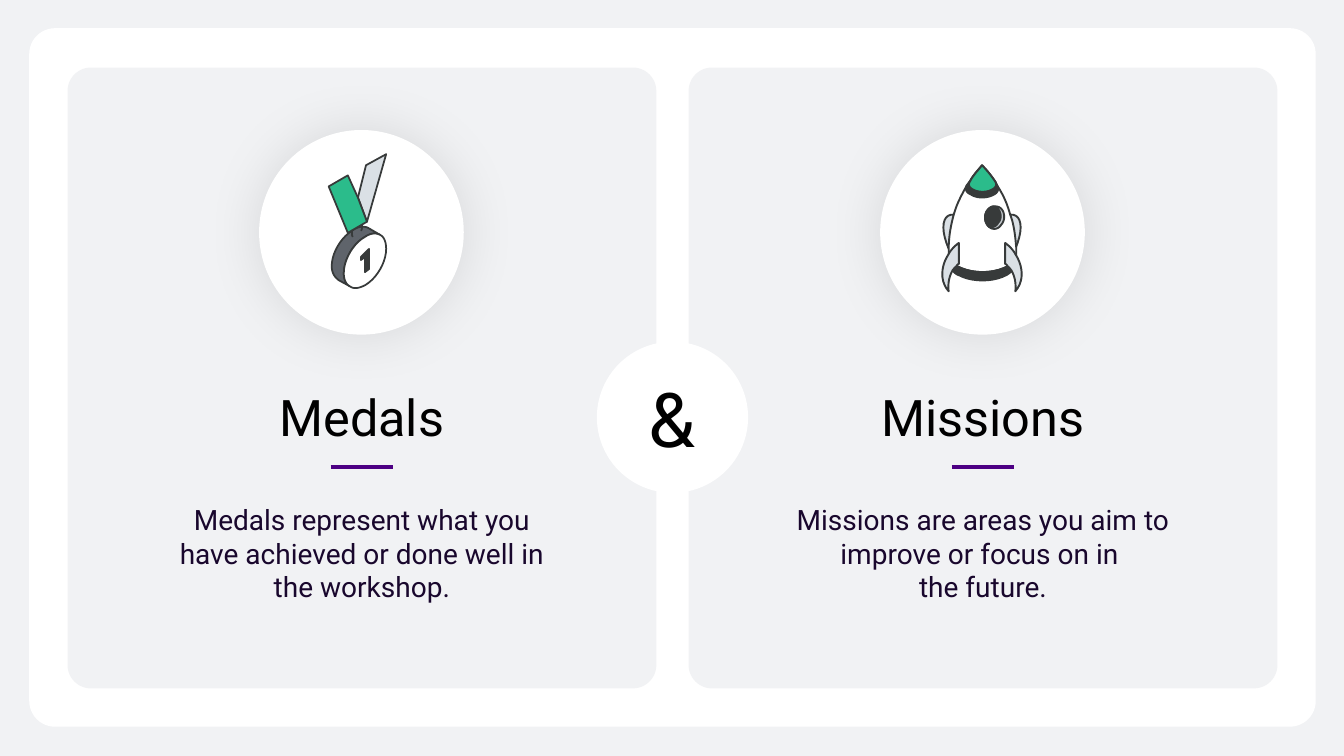
from lxml.etree import SubElement
from pptx import Presentation
from pptx.dml.color import RGBColor
from pptx.enum.shapes import MSO_CONNECTOR, MSO_SHAPE
from pptx.enum.text import MSO_ANCHOR, PP_ALIGN
from pptx.oxml.ns import qn
from pptx.util import Inches, Pt

WHITE = RGBColor(0xFF, 0xFF, 0xFF)
BLACK = RGBColor(0x00, 0x00, 0x00)
MIST = RGBColor(0xF1, 0xF2, 0xF4)
NIGHT = RGBColor(0x19, 0x07, 0x2D)
VIOLET = RGBColor(0x4D, 0x00, 0x83)
CHARCOAL = RGBColor(0x37, 0x3A, 0x3A)
SLATE = RGBColor(0x5F, 0x64, 0x6B)
SILVER = RGBColor(0xDA, 0xE0, 0xE5)
GLASS = RGBColor(0xC2, 0xC7, 0xCC)
GREEN = RGBColor(0x2B, 0xBC, 0x8B)

CARD_TOP, CARD_WIDTH, CARD_HEIGHT = 0.67, 5.84, 6.16
CARD_LEFTS = (0.67, 6.83)
ROCKET_AXIS = 9.74
CURVE_STEPS = 10


def mirror(points):
    return [tuple(round(2 * ROCKET_AXIS - value, 2) if index % 2 == 0 else value
                  for index, value in enumerate(point)) for point in points]


def flatten(points):
    corners = [points[0]]
    for point in points[1:]:
        if len(point) == 2:
            corners.append(point)
            continue
        x0, y0 = corners[-1]
        x1, y1, x2, y2, x3, y3 = point
        for step in range(1, CURVE_STEPS + 1):
            t = step / CURVE_STEPS
            a, b, c, d = (1 - t) ** 3, 3 * t * (1 - t) ** 2, 3 * t * t * (1 - t), t ** 3
            corners.append((a * x0 + b * x1 + c * x2 + d * x3,
                            a * y0 + b * y1 + c * y2 + d * y3))
    return corners


MEDAL = [
    (SILVER, [(3.83, 1.53), (3.64, 2.2), (3.55, 1.96), (3.63, 1.64)]),
    (SLATE, [(3.49, 2.29), (3.52, 2.27), (3.54, 2.26, 3.57, 2.25, 3.59, 2.25),
             (3.61, 2.25, 3.63, 2.25, 3.65, 2.26), (3.77, 2.33),
             (3.73, 2.31, 3.68, 2.31, 3.62, 2.35), (3.51, 2.41, 3.41, 2.57, 3.41, 2.71),
             (3.41, 2.77, 3.43, 2.82, 3.47, 2.84), (3.36, 2.78),
             (3.32, 2.75, 3.29, 2.71, 3.29, 2.64), (3.29, 2.51, 3.38, 2.36, 3.49, 2.29)]),
    (WHITE, [(3.77, 2.33), (3.81, 2.35, 3.83, 2.4, 3.83, 2.47),
             (3.83, 2.6, 3.74, 2.76, 3.62, 2.83), (3.56, 2.86, 3.51, 2.87, 3.47, 2.84),
             (3.43, 2.82, 3.41, 2.77, 3.41, 2.71), (3.41, 2.57, 3.51, 2.41, 3.62, 2.35),
             (3.68, 2.31, 3.73, 2.31, 3.77, 2.33)]),
    (CHARCOAL, [(3.66, 2.47), (3.66, 2.67), (3.62, 2.7), (3.62, 2.55),
                (3.58, 2.58), (3.58, 2.55)]),
    (GREEN, [(3.55, 1.96), (3.64, 2.2), (3.45, 2.31), (3.26, 1.85), (3.45, 1.74)]),
    (None, [(3.59, 2.23), (3.59, 2.25), (3.59, 2.27, 3.59, 2.28, 3.58, 2.29)]),
    (None, [(3.5, 2.35), (3.49, 2.34, 3.49, 2.33, 3.49, 2.31), (3.49, 2.28)]),
]

FIN = [(9.41, 2.89), (9.41, 2.89, 9.39, 2.78, 9.45, 2.68),
       (9.46, 2.67, 9.47, 2.65, 9.49, 2.64), (9.49, 2.63, 9.5, 2.62, 9.51, 2.62),
       (9.51, 2.41), (9.47, 2.44, 9.43, 2.48, 9.41, 2.52),
       (9.33, 2.64, 9.32, 2.79, 9.41, 2.89)]
WING = [(9.46, 2.13), (9.35, 2.12, 9.32, 2.26, 9.41, 2.47)]

ROCKET = [
    (SILVER, WING),
    (SILVER, mirror(WING)),
    (WHITE, [(9.74, 1.64), (9.79, 1.69, 9.83, 1.74, 9.87, 1.8), (9.89, 1.84),
             (9.95, 1.93, 9.99, 2.02, 10.02, 2.13), (10.06, 2.23, 10.07, 2.35, 10.08, 2.46),
             (10.08, 2.53), (10, 2.64), (9.85, 2.72, 9.64, 2.72, 9.49, 2.64),
             (9.41, 2.52), (9.41, 2.47), (9.41, 2.35, 9.43, 2.24, 9.46, 2.13),
             (9.49, 2.02, 9.54, 1.93, 9.59, 1.84), (9.62, 1.8),
             (9.65, 1.74, 9.7, 1.69, 9.74, 1.64)]),
    (CHARCOAL, [(10.04, 2.69), (10.02, 2.7, 10, 2.72, 9.98, 2.73),
                (9.85, 2.8, 9.64, 2.8, 9.51, 2.73), (9.48, 2.72, 9.46, 2.7, 9.45, 2.68),
                (9.49, 2.64), (9.64, 2.72, 9.85, 2.72, 10, 2.64)]),
    (CHARCOAL, [(9.89, 1.84), (9.91, 1.87, 9.9, 1.91, 9.86, 1.93),
                (9.79, 1.97, 9.69, 1.97, 9.63, 1.93), (9.58, 1.91, 9.57, 1.87, 9.59, 1.84),
                (9.62, 1.8), (9.87, 1.8)]),
    (GREEN, [(9.87, 1.8), (9.89, 1.83, 9.88, 1.86, 9.84, 1.88),
             (9.79, 1.91, 9.7, 1.91, 9.65, 1.88), (9.61, 1.86, 9.6, 1.83, 9.62, 1.8),
             (9.65, 1.74, 9.7, 1.69, 9.74, 1.64), (9.79, 1.69, 9.83, 1.74, 9.87, 1.8)]),
    (GLASS, [(9.89, 2.05), (9.9, 2.05, 9.92, 2.06, 9.93, 2.07),
             (9.97, 2.11, 9.97, 2.19, 9.93, 2.23), (9.9, 2.28, 9.84, 2.28, 9.81, 2.25),
             (9.76, 2.21, 9.76, 2.13, 9.79, 2.09), (9.82, 2.05, 9.85, 2.04, 9.89, 2.05)]),
    (CHARCOAL, [(9.89, 2.06), (9.93, 2.1, 9.94, 2.17, 9.9, 2.21),
                (9.88, 2.25, 9.84, 2.26, 9.81, 2.25), (9.76, 2.21, 9.76, 2.13, 9.79, 2.09),
                (9.82, 2.05, 9.85, 2.04, 9.89, 2.06)]),
    (SILVER, FIN),
    (SILVER, mirror(FIN)),
]

CARDS = [
    ("Medals", 1.91, "Medals represent what you have achieved or done well in the workshop.",
     MEDAL, 1.25),
    ("Missions", 2.55, "Missions are areas you aim to improve or focus on in \vthe future.",
     ROCKET, 1.36),
]


class SlideBuilder:
    font_name = "Roboto"

    def __init__(self, page):
        self.page = page

    def paint(self, shape, fill):
        shape.shadow.inherit = False
        if fill is None:
            shape.fill.background()
        else:
            shape.fill.solid()
            shape.fill.fore_color.rgb = fill
        shape.line.fill.background()

    def shape(self, kind, left, top, width, height, fill=None, corner=None):
        shape = self.page.shapes.add_shape(
            kind, Inches(left), Inches(top), Inches(width), Inches(height))
        self.paint(shape, fill)
        if corner is not None:
            shape.adjustments[0] = corner
        return shape

    def glow(self, shape):
        effects = shape._element.spPr.find(qn("a:effectLst"))
        shadow = SubElement(effects, qn("a:outerShdw"), blurRad=str(Pt(40)), dist="0",
                            algn="ctr", rotWithShape="0")
        color = SubElement(shadow, qn("a:srgbClr"), val=str(BLACK))
        SubElement(color, qn("a:alpha"), val="11000")

    def label(self, shape, text, size, color, **frame_format):
        frame = shape.text_frame
        for name, value in {"word_wrap": True, **frame_format}.items():
            setattr(frame, name, value)
        para = frame.paragraphs[0]
        para.text = text
        para.alignment = PP_ALIGN.CENTER
        for span in para.runs:
            for name, value in {"name": self.font_name, "size": Pt(size)}.items():
                setattr(span.font, name, value)
            span.font.color.rgb = color

    def heading(self, center, top, width, text):
        box = self.page.shapes.add_textbox(
            Inches(center - width / 2), Inches(top), Inches(width), Inches(0.71))
        self.label(box, text, 36, BLACK)

    def rule(self, left, top, width):
        line = self.page.shapes.add_connector(
            MSO_CONNECTOR.STRAIGHT, Inches(left), Inches(top), Inches(left + width), Inches(top))
        line.line.color.rgb = VIOLET
        line.line.width = Pt(3)
        SubElement(line._element.spPr, qn("a:effectLst"))

    def icon(self, parts, stroke):
        for fill, points in parts:
            corners = [(Inches(x), Inches(y)) for x, y in flatten(points)]
            builder = self.page.shapes.build_freeform(*corners[0])
            builder.add_line_segments(corners[1:], close=fill is not None)
            outline = builder.convert_to_shape()
            self.paint(outline, fill)
            outline.line.color.rgb = CHARCOAL
            outline.line.width = Pt(stroke)


def main():
    deck = Presentation()
    deck.slide_width, deck.slide_height = Inches(13.33), Inches(7.5)
    page = deck.slides.add_slide(deck.slide_layouts[6])
    page.background.fill.solid()
    page.background.fill.fore_color.rgb = MIST
    slide = SlideBuilder(page)
    slide.shape(MSO_SHAPE.ROUNDED_RECTANGLE, 0.29, 0.28, 12.76, 6.93, WHITE, 0.037)
    for left, (title, title_width, body, parts, stroke) in zip(CARD_LEFTS, CARDS):
        slide.shape(MSO_SHAPE.ROUNDED_RECTANGLE, left, CARD_TOP, CARD_WIDTH, CARD_HEIGHT,
                    MIST, 0.04)
        slide.glow(slide.shape(MSO_SHAPE.OVAL, left + 1.9, 1.29, 2.03, 2.03, WHITE))
        slide.heading(left + CARD_WIDTH / 2, 3.78, title_width, title)
        body_box = slide.shape(MSO_SHAPE.ROUNDED_RECTANGLE, left, 4.77, CARD_WIDTH, 2.06,
                               corner=0.086)
        slide.label(body_box, body, 20, NIGHT, vertical_anchor=MSO_ANCHOR.BOTTOM,
                    margin_left=Inches(0.94), margin_right=Inches(0.94),
                    margin_top=Inches(0.79), margin_bottom=Inches(0.79))
        slide.rule(left + 2.61, 4.63, 0.62)
        slide.icon(parts, stroke)
    ampersand = slide.shape(MSO_SHAPE.OVAL, 5.92, 3.39, 1.5, 1.5, WHITE)
    slide.label(ampersand, "&", 54, BLACK, vertical_anchor=MSO_ANCHOR.MIDDLE)
    deck.save("out.pptx")


if __name__ == "__main__":
    main()
